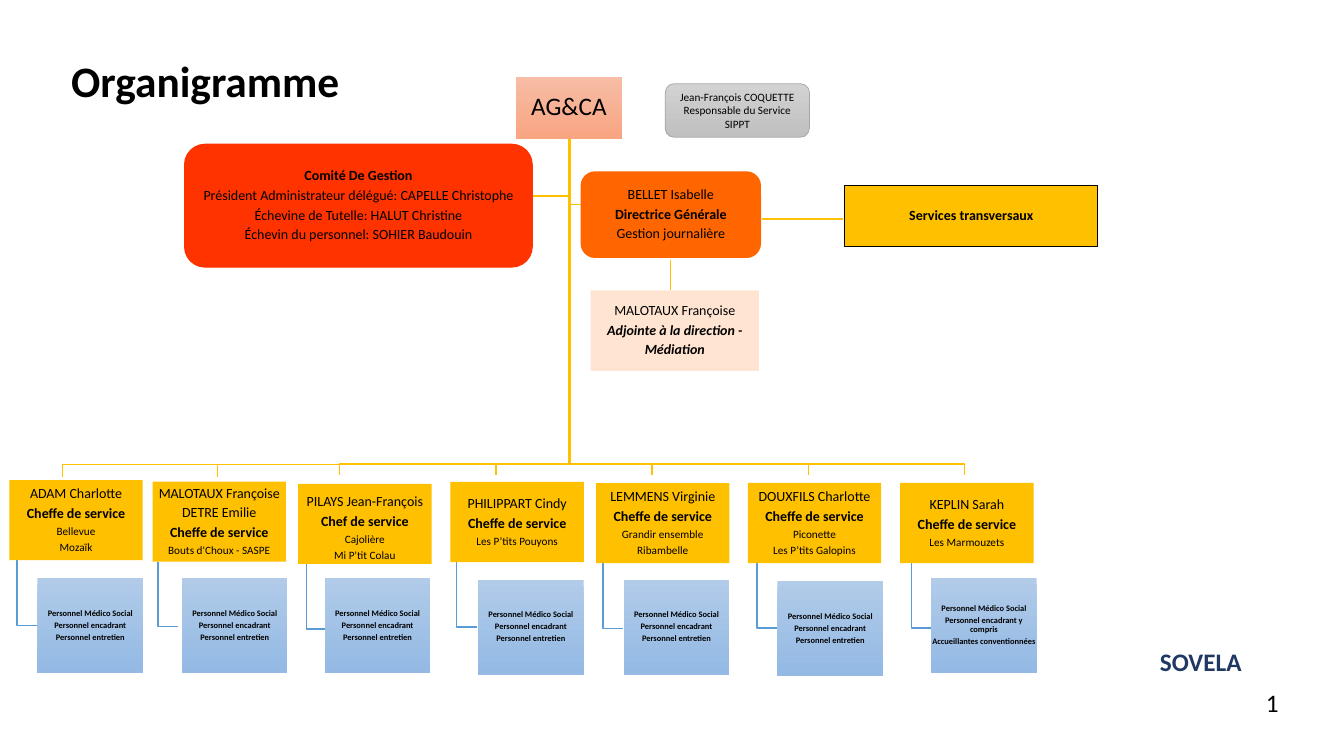
import pptx
import pptx.util
import pptx.dml.color
import pptx.enum.shapes
import pptx.enum.text
import pptx.oxml
import pptx.oxml.ns
from dataclasses import dataclass

Pt = pptx.util.Pt
MSO = pptx.enum.shapes.MSO_SHAPE
ALIGN = pptx.enum.text.PP_ALIGN
ANCHOR = pptx.enum.text.MSO_ANCHOR


@dataclass(frozen=True)
class Theme:
    font: str = "Calibri"
    ink: str = "000000"
    navy: str = "203864"
    gold: str = "FFC000"
    blue: str = "5B9BD5"
    red: str = "FF3300"
    orange: str = "FF6600"
    peach: str = "FFE4D1"
    gray_line: str = "A5A5A5"
    salmon: tuple = ("F7BDA5", "F8A582")
    sky: tuple = ("B1CBE9", "93B9E4")
    gray: tuple = ("D2D2D2", "C0C0C0")
    title: float = 31
    large: float = 18
    name: float = 10
    small: float = 8
    tiny: float = 6


THEME = Theme()


def rgb(value):
    return pptx.dml.color.RGBColor.from_string(value)


def add_text(tf, text, size=THEME.name, bold=False, italic=False, color=THEME.ink,
             align=ALIGN.CENTER, spacing=0.9, after=0.33):
    p = tf.paragraphs[0] if not tf.text else tf.add_paragraph()
    p.alignment = align
    p.line_spacing = spacing
    p.space_before = Pt(0)
    p.space_after = Pt(round(size * after, 2))
    r = p.add_run()
    r.text = text
    r.font.name = THEME.font
    r.font.size = Pt(size)
    r.font.bold = bold
    r.font.italic = italic
    r.font.color.rgb = rgb(color)


class OrgChart:
    def __init__(self, prs, theme):
        self.theme = theme
        self.slide = prs.slides.add_slide(prs.slide_layouts[5])
        self.shapes = self.slide.shapes

    def title(self, text, x, y, w, h):
        sp = self.shapes.title
        sp.left, sp.top, sp.width, sp.height = Pt(x), Pt(y), Pt(w), Pt(h)
        tf = sp.text_frame
        tf.word_wrap = True
        tf.vertical_anchor = ANCHOR.MIDDLE
        tf.margin_left = Pt(17)
        add_text(tf, text, size=self.theme.title, bold=True, align=ALIGN.LEFT, after=0)

    def label(self, text, x, y, w, h, wrap=True, **fmt):
        tf = self.shapes.add_textbox(Pt(x), Pt(y), Pt(w), Pt(h)).text_frame
        tf.word_wrap = wrap
        add_text(tf, text, size=self.theme.large, align=ALIGN.LEFT, spacing=1.0, after=0, **fmt)

    def box(self, x, y, w, h, fill, lines, kind=MSO.RECTANGLE, line=None, line_width=0.75,
            margin=0.7, extra_top=0, **fmt):
        sp = self.shapes.add_shape(kind, Pt(x), Pt(y), Pt(w), Pt(h))
        sp.shadow.inherit = False
        if isinstance(fill, tuple):
            sp.fill.gradient()
            sp.fill.gradient_angle = 270
            for stop, color in zip(sp.fill.gradient_stops, fill):
                stop.color.rgb = rgb(color)
        else:
            sp.fill.solid()
            sp.fill.fore_color.rgb = rgb(fill)
        if line:
            sp.line.color.rgb = rgb(line)
            sp.line.width = Pt(line_width)
        else:
            sp.line.fill.background()
        tf = sp.text_frame
        tf.word_wrap = True
        tf.vertical_anchor = ANCHOR.MIDDLE
        tf.margin_left = tf.margin_right = tf.margin_bottom = Pt(margin)
        tf.margin_top = Pt(margin + extra_top)
        for text, style in lines:
            add_text(tf, text, **{**fmt, **style})

    def elbow(self, points, color):
        start, *rest = [(Pt(x), Pt(y)) for x, y in points]
        builder = self.shapes.build_freeform(*start)
        builder.add_line_segments(rest, close=False)
        sp = builder.convert_to_shape()
        sp.shadow.inherit = False
        sp.fill.background()
        sp.line.color.rgb = rgb(color)
        sp.line.width = Pt(1)

    def line(self, x1, y1, x2, y2):
        cx = self.shapes.add_connector(pptx.enum.shapes.MSO_CONNECTOR.STRAIGHT,
                                       Pt(x1), Pt(y1), Pt(x2), Pt(y2))
        cx.line.color.rgb = rgb(self.theme.gold)
        cx.line.width = Pt(1)
        sp_pr = cx.element.find(pptx.oxml.ns.qn("p:spPr"))
        sp_pr.append(pptx.oxml.parse_xml("<a:effectLst %s/>" % pptx.oxml.ns.nsdecls("a")))


PLAIN, BOLD = {}, {"bold": True}
BOLD_ITALIC = {"bold": True, "italic": True}
SITE = {"size": THEME.small}

STAFF = ["Personnel Médico Social", "Personnel encadrant", "Personnel entretien"]
KEPLIN_STAFF = [STAFF[0], "Personnel encadrant y compris", "Accueillantes conventionnées"]

SERVICES = [
    (6.7, 342.9, 12.2, 26.8, 412.8, ["ADAM Charlotte"], "Cheffe de service",
     ["Bellevue", "Mozaïk"], STAFF, 0),
    (109, 344, 113, 130, 412.8, ["MALOTAUX Françoise", "DETRE Emilie"], "Cheffe de service",
     ["Bouts d'Choux - SASPE"], STAFF, 0),
    (213, 345.6, 218.9, 232, 412.8, ["PILAYS Jean-François"], "Chef de service",
     ["Cajolière", "Mi P'tit Colau"], STAFF, 6),
    (321.8, 344.3, 326.2, 341.5, 414, ["PHILIPPART Cindy"], "Cheffe de service",
     ["Les P’tits Pouyons"], STAFF, 0),
    (425.8, 345.1, 430.6, 445.5, 414, ["LEMMENS Virginie"], "Cheffe de service",
     ["Grandir ensemble", "Ribambelle"], STAFF, 0),
    (534.2, 345, 540.7, 555.3, 415, ["DOUXFILS Charlotte"], "Cheffe de service",
     ["Piconette", "Les P’tits Galopins"], STAFF, 0),
    (643, 345, 650.9, 665.1, 412.8, ["KEPLIN Sarah"], "Cheffe de service",
     ["Les Marmouzets"], KEPLIN_STAFF, 0),
]


def draw_trunk(chart):
    gold = chart.theme.gold
    top, bus = 98.6, 331.5
    chart.elbow([(406.1, top), (406.1, 146.2), (415.4, 146.2)], gold)
    chart.elbow([(406.8, top), (406.8, 139.9), (380.2, 139.9)], gold)
    for i, trunk in enumerate([407.5, 406.8, 406.1, 406.1, 406.1]):
        x = 242.6 + 111.6 * i
        chart.elbow([(trunk, top), (trunk, bus), (x, bus), (x, 339.1)], gold)
    chart.line(44.3, 332, 242.6, 332)
    for x in (44.6, 155.5):
        chart.line(x, 332, x, 341)
    chart.line(544.3, 156.5, 602, 156.5)
    chart.line(478.8, 185.8, 478.8, 207.4)


def draw_direction(chart):
    t = chart.theme
    chart.box(368.6, 54.7, 75.6, 44.3, t.salmon, [("AG&CA", {"size": t.large})])
    chart.box(131.8, 103, 248.4, 87.8, t.red, [
        ("Comité De Gestion", BOLD),
        ("Président Administrateur délégué: CAPELLE Christophe", PLAIN),
        ("Échevine de Tutelle: HALUT Christine", PLAIN),
        ("Échevin du personnel: SOHIER Baudouin", PLAIN),
    ], kind=MSO.ROUNDED_RECTANGLE, line=t.red)
    chart.box(414.7, 122.4, 128.9, 61.9, t.orange, [
        ("BELLET Isabelle", PLAIN), ("Directrice Générale", BOLD), ("Gestion journalière", PLAIN),
    ], kind=MSO.ROUNDED_RECTANGLE)
    chart.box(475.2, 59.8, 103, 38.2, t.gray, [
        ("Jean-François COQUETTE", SITE), ("Responsable du Service SIPPT", SITE),
    ], kind=MSO.ROUNDED_RECTANGLE, line=t.gray_line, line_width=0.5, margin=5, spacing=1.0, after=0)
    chart.box(603.4, 132.5, 180.7, 43.9, t.gold, [("Services transversaux", BOLD)], line=t.ink)
    chart.box(421.9, 207.4, 120.2, 57.6, t.peach, [
        ("MALOTAUX Françoise", PLAIN), ("Adjointe à la direction -", BOLD_ITALIC),
        ("Médiation", BOLD_ITALIC),
    ])


def draw_services(chart):
    t = chart.theme
    head_w, head_h, staff_w, staff_h = 95.3, 57.2, 75.4, 67.9
    for x, y, stem, staff_x, staff_y, names, role, sites, staff, extra_top in SERVICES:
        bottom = y + head_h
        chart.elbow([(stem, bottom), (stem, bottom + 46.5), (stem + 14.4, bottom + 46.5)], t.blue)
        lines = [(n, PLAIN) for n in names] + [(role, BOLD)] + [(s, SITE) for s in sites]
        chart.box(x, y, head_w, head_h, t.gold, lines, extra_top=extra_top)
        chart.box(staff_x, staff_y, staff_w, staff_h, t.sky, [(s, BOLD) for s in staff],
                  margin=0, size=t.tiny)


def main():
    prs = pptx.Presentation()
    prs.slide_width, prs.slide_height = Pt(960), Pt(540)
    chart = OrgChart(prs, THEME)
    chart.title("Organigramme", 33.8, 31.6, 222.5, 55.4)
    draw_trunk(chart)
    draw_direction(chart)
    draw_services(chart)
    chart.label("SOVELA", 821.5, 457.9, 74.2, 28.8, wrap=False, bold=True, color=THEME.navy)
    chart.label("1", 897.1, 487.4, 35.3, 28.8)
    prs.save("out.pptx")


if __name__ == "__main__":
    main()
